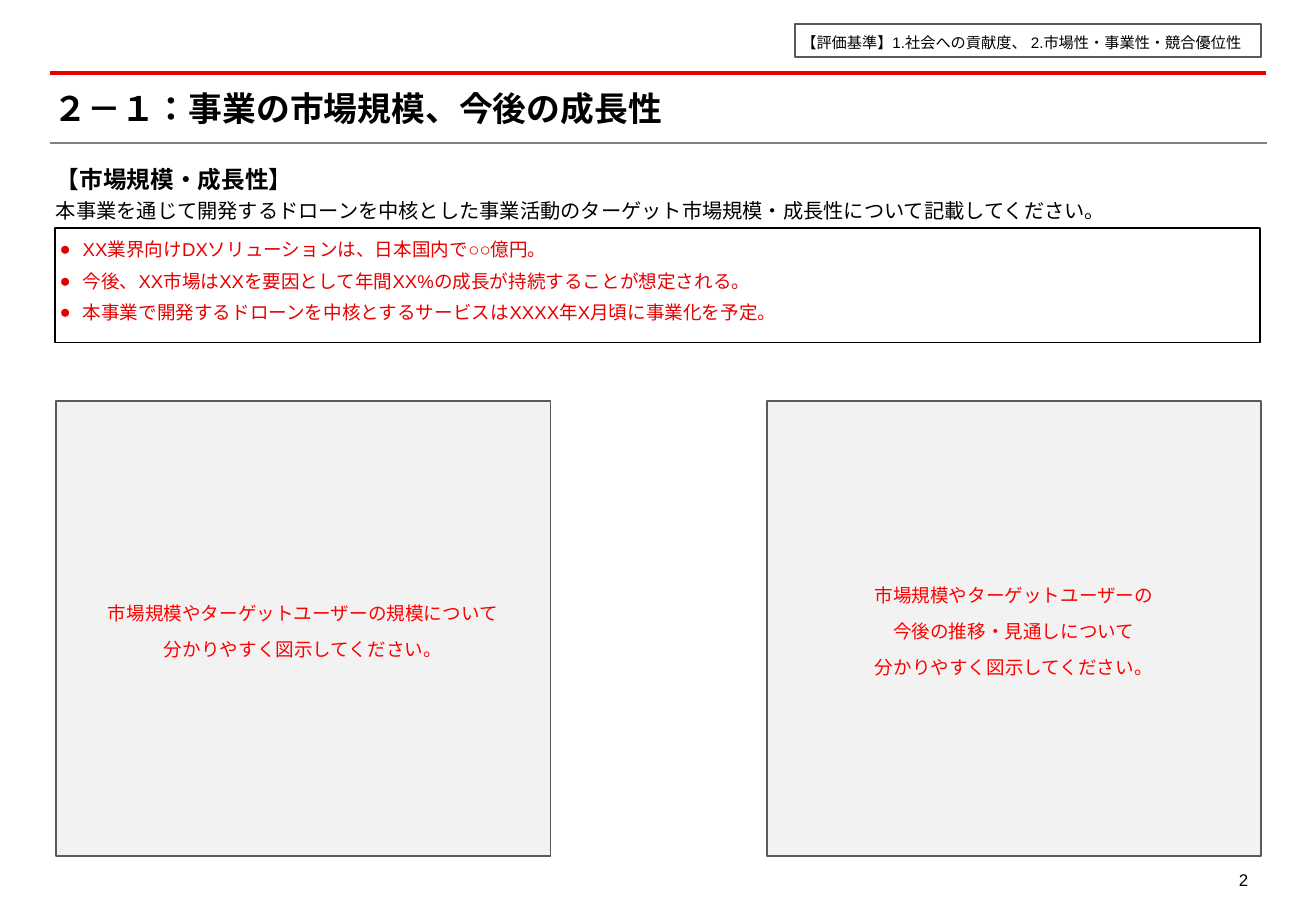
from lxml import etree
from pptx import Presentation
from pptx.dml.color import RGBColor
from pptx.enum import shapes, text
from pptx.oxml.ns import qn
from pptx.util import Inches, Pt

BLACK, RED, PALE, GRAY = "000000", "E60000", "F2F2F2", "5A5A5A"
LEFT, CENTER, RIGHT = text.PP_ALIGN.LEFT, text.PP_ALIGN.CENTER, text.PP_ALIGN.RIGHT
TOP, MIDDLE = text.MSO_ANCHOR.TOP, text.MSO_ANCHOR.MIDDLE
rgb = RGBColor.from_string


def write(sp, lines, size, color=BLACK, align=LEFT, anchor=TOP, wrap=True,
          insets=(0.02, 0.02, 0.02, 0.02), spacing=1.2, before=0):
    """Fill a shape with one paragraph per line and return its paragraphs."""
    tf = sp.text_frame
    tf.text = "\n".join(lines)
    tf.word_wrap = wrap
    tf.vertical_anchor = anchor
    tf.margin_left, tf.margin_top, tf.margin_right, tf.margin_bottom = map(Inches, insets)
    for p in tf.paragraphs:
        p.alignment = align
        p.line_spacing = spacing
        p.space_before = Pt(before)
        for r in p.runs:
            r.font.name = "Arial"
            r.font.size = Pt(size)
            r.font.color.rgb = rgb(color)
            rPr = r._r.get_or_add_rPr()
            rPr.set("lang", "ja-JP")
            etree.SubElement(rPr, qn("a:ea"), typeface="Arial")
    return tf.paragraphs


def add_box(x, y, w, h, fill, line):
    sp = s.shapes.add_shape(shapes.MSO_SHAPE.RECTANGLE, *map(Inches, (x, y, w, h)))
    sp.shadow.inherit = False
    if fill:
        sp.fill.solid()
        sp.fill.fore_color.rgb = rgb(fill)
    else:
        sp.fill.background()
    sp.line.color.rgb = rgb(line)
    sp.line.width = Pt(1)
    return sp


prs = Presentation()
prs.slide_width, prs.slide_height = Inches(10.83), Inches(7.5)
s = prs.slides.add_slide(prs.slide_layouts[6])

# Page number and the rules around the title
number = s.shapes.add_textbox(Inches(9.93), Inches(7.08), Inches(0.44), Inches(0.28))
write(number, ["2"], 10, align=RIGHT, insets=(0.1, 0.05, 0.1, 0.05), before=2)

for y, end, color, width in [(0.6, 10.42, RED, 2), (1.18, 10.43, "808080", 1.25)]:
    rule = s.shapes.add_connector(shapes.MSO_CONNECTOR.STRAIGHT,
                                  Inches(0.41), Inches(y), Inches(end), Inches(y))
    rule.line.color.rgb = rgb(color)
    rule.line.width = Pt(width)
    etree.SubElement(rule._element.spPr, qn("a:effectLst"))

# Title and section heading
title = s.shapes.add_textbox(Inches(0.44), Inches(0.72), Inches(9.91), Inches(0.34))
p = write(title, ["２－１：事業の市場規模、今後の成長性"], 20, anchor=MIDDLE,
          insets=(0, 0, 0, 0), spacing=1)[0]
p.runs[0].font.bold = True

heading = s.shapes.add_textbox(Inches(0.46), Inches(1.31), Inches(10.05), Inches(0.5))
p = write(heading, [
    "【市場規模・成長性】",
    "本事業を通じて開発するドローンを中核とした事業活動のターゲット市場規模・成長性について記載してください。",
], 12, insets=(0, 0, 0, 0))[0]
p.runs[0].font.size = Pt(14)
p.runs[0].font.bold = True

# Bulleted market summary
summary = add_box(0.45, 1.88, 9.92, 0.94, "FFFFFF", BLACK)
for p in write(summary, [
    "XX業界向けDXソリューションは、日本国内で○○億円。",
    "今後、XX市場はXXを要因として年間XX%の成長が持続することが想定される。",
    "本事業で開発するドローンを中核とするサービスはXXXX年X月頃に事業化を予定。",
], 11, RED, insets=(0.04, 0.08, 0.02, 0.02), spacing=1):
    p.space_after = Pt(5.5)
    pPr = p._p.get_or_add_pPr()
    pPr.set("marL", str(Inches(0.19)))
    pPr.set("indent", str(-Inches(0.19)))
    bullet_color = etree.SubElement(pPr, qn("a:buClr"))
    etree.SubElement(bullet_color, qn("a:srgbClr"), val=RED)
    etree.SubElement(pPr, qn("a:buFont"), typeface="Arial")
    etree.SubElement(pPr, qn("a:buChar"), char="●")

# Figure areas
for x, lines in [
    (0.46, ["市場規模やターゲットユーザーの規模について", "分かりやすく図示してください。"]),
    (6.31, ["市場規模やターゲットユーザーの", "今後の推移・見通しについて", "分かりやすく図示してください。"]),
]:
    figure = add_box(x, 3.3, 4.07, 3.75, PALE, GRAY)
    write(figure, lines, 11, "FF0000", CENTER, MIDDLE, wrap=False, before=5.5)

# Evaluation criteria, sized to stay inside the frame
criteria = add_box(6.54, 0.2, 3.84, 0.27, None, "595959")
write(criteria, [" 【評価基準】1.社会への貢献度、 2.市場性・事業性・競合優位性"], 9,
      anchor=MIDDLE, wrap=False, before=2)

prs.save("out.pptx")
